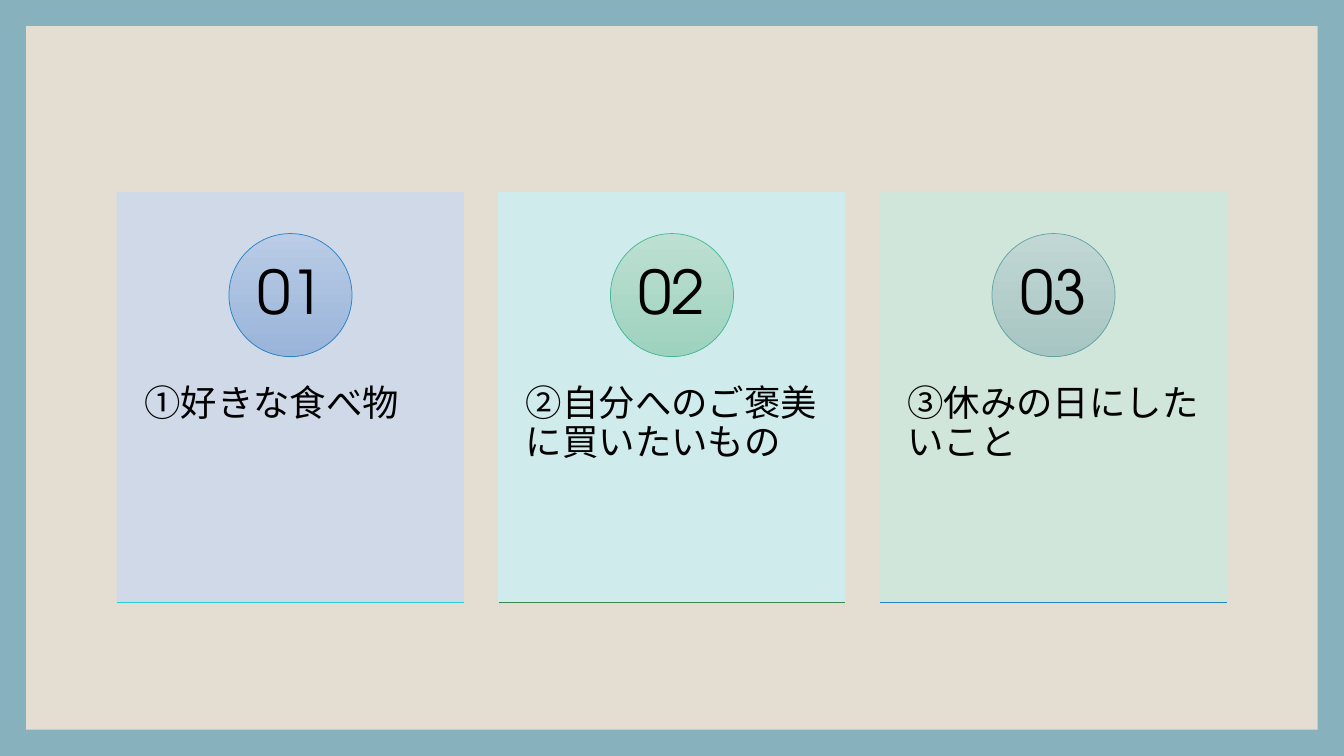
import pptx
import pptx.util
import pptx.dml.color
import pptx.enum.shapes
import pptx.enum.text
import pptx.oxml.ns
import pptx.oxml.xmlchemy

# Content: number, topic, card fill, circle gradient, circle line, base line
CARDS = [
    ("01", "①好きな食べ物", "CDD9EA", ("BACCE6", "99B4D9"), "2683C6", "27CED7"),
    ("02", "②自分へのご褒美に買いたいもの", "CDEDF0", ("BDE0D2", "9ED2BE"), "42BA97", "3E8853"),
    ("03", "③休みの日にしたいこと", "CFE7DD", ("C2D7D5", "A7C5C2"), "62A39F", "2683C6"),
]
COLOURS = {"frame": "87B1BD", "panel": "E3DED1", "text": "000000"}
FONT = "TeX Gyre Adventor"

# Grid, in inches
WIDTH, HEIGHT = 13.33, 7.5
BORDER = 0.26
CARD_WIDTH, CARD_HEIGHT, CARD_TOP = 3.44, 4.07, 1.91
PITCH = CARD_WIDTH * 1.1
FIRST_LEFT = (WIDTH - CARD_WIDTH - PITCH * (len(CARDS) - 1)) / 2
CIRCLE = CARD_HEIGHT * 0.3
CIRCLE_TOP = CARD_TOP + CARD_HEIGHT * 0.1

# Text formats
TOPIC = {
    "size": 26, "align": pptx.enum.text.PP_ALIGN.LEFT,
    "frame": {"word_wrap": True, "vertical_anchor": pptx.enum.text.MSO_ANCHOR.TOP},
    "margins": (0.27, 1.91, 0.27, 0.44),
}
NUMBER = {
    "size": 43, "align": pptx.enum.text.PP_ALIGN.CENTER,
    "frame": {"word_wrap": False, "vertical_anchor": pptx.enum.text.MSO_ANCHOR.MIDDLE},
    "margins": (0, 0, 0, 0),
}

SHAPES = pptx.enum.shapes.MSO_SHAPE
inches = pptx.util.Inches
new_element = pptx.oxml.xmlchemy.OxmlElement


def rgb(code):
    return pptx.dml.color.RGBColor.from_string(code)


def add_box(page, kind, left, top, width, height):
    box = page.shapes.add_shape(kind, *map(inches, (left, top, width, height)))
    box.shadow.inherit = False
    return box


def set_line(box, colour):
    box.line.color.rgb = rgb(colour)
    box.line.width = pptx.util.Pt(0.5)


def set_opacity(box, percent):
    for colour in box._element.spPr.iter(pptx.oxml.ns.qn("a:srgbClr")):
        alpha = new_element("a:alpha")
        alpha.set("val", str(percent * 1000))
        colour.append(alpha)


def write(box, text, style):
    frame = box.text_frame
    for name, value in style["frame"].items():
        setattr(frame, name, value)
    for side, value in zip(("left", "top", "right", "bottom"), style["margins"]):
        setattr(frame, "margin_" + side, inches(value))
    para = frame.paragraphs[0]
    para.alignment = style["align"]
    para.line_spacing = 0.9
    span = para.add_run()
    span.text = text
    span.font.name = FONT
    span.font.size = pptx.util.Pt(style["size"])
    span.font.color.rgb = rgb(COLOURS["text"])


def add_card(page, left, number, topic, fill, shades, ring, base):
    # Card with its topic
    card = add_box(page, SHAPES.RECTANGLE, left, CARD_TOP, CARD_WIDTH, CARD_HEIGHT)
    card.fill.solid()
    card.fill.fore_color.rgb = rgb(fill)
    set_line(card, fill)
    set_opacity(card, 90)
    write(card, topic, TOPIC)

    # Numbered circle
    circle = add_box(page, SHAPES.OVAL, left + (CARD_WIDTH - CIRCLE) / 2,
                     CIRCLE_TOP, CIRCLE, CIRCLE)
    circle.fill.gradient()
    circle.fill.gradient_angle = 270
    for stop, shade in zip(circle.fill.gradient_stops, shades):
        stop.color.rgb = rgb(shade)
    set_line(circle, ring)
    write(circle, number, NUMBER)

    # Line under the card
    bottom = CARD_TOP + CARD_HEIGHT
    rule = page.shapes.add_connector(
        pptx.enum.shapes.MSO_CONNECTOR.STRAIGHT,
        *map(inches, (left, bottom, left + CARD_WIDTH, bottom)))
    set_line(rule, base)
    rule._element.spPr.append(new_element("a:effectLst"))


def main():
    deck = pptx.Presentation()
    deck.slide_width, deck.slide_height = inches(WIDTH), inches(HEIGHT)
    page = deck.slides.add_slide(deck.slide_layouts[6])

    # Frame and panel
    page.background.fill.solid()
    page.background.fill.fore_color.rgb = rgb(COLOURS["frame"])
    panel = add_box(page, SHAPES.RECTANGLE, BORDER, BORDER,
                    WIDTH - 2 * BORDER, HEIGHT - 2 * BORDER)
    panel.fill.solid()
    panel.fill.fore_color.rgb = rgb(COLOURS["panel"])
    panel.line.fill.background()

    # Row of cards
    for column, card in enumerate(CARDS):
        add_card(page, FIRST_LEFT + column * PITCH, *card)

    deck.save("out.pptx")


if __name__ == "__main__":
    main()
